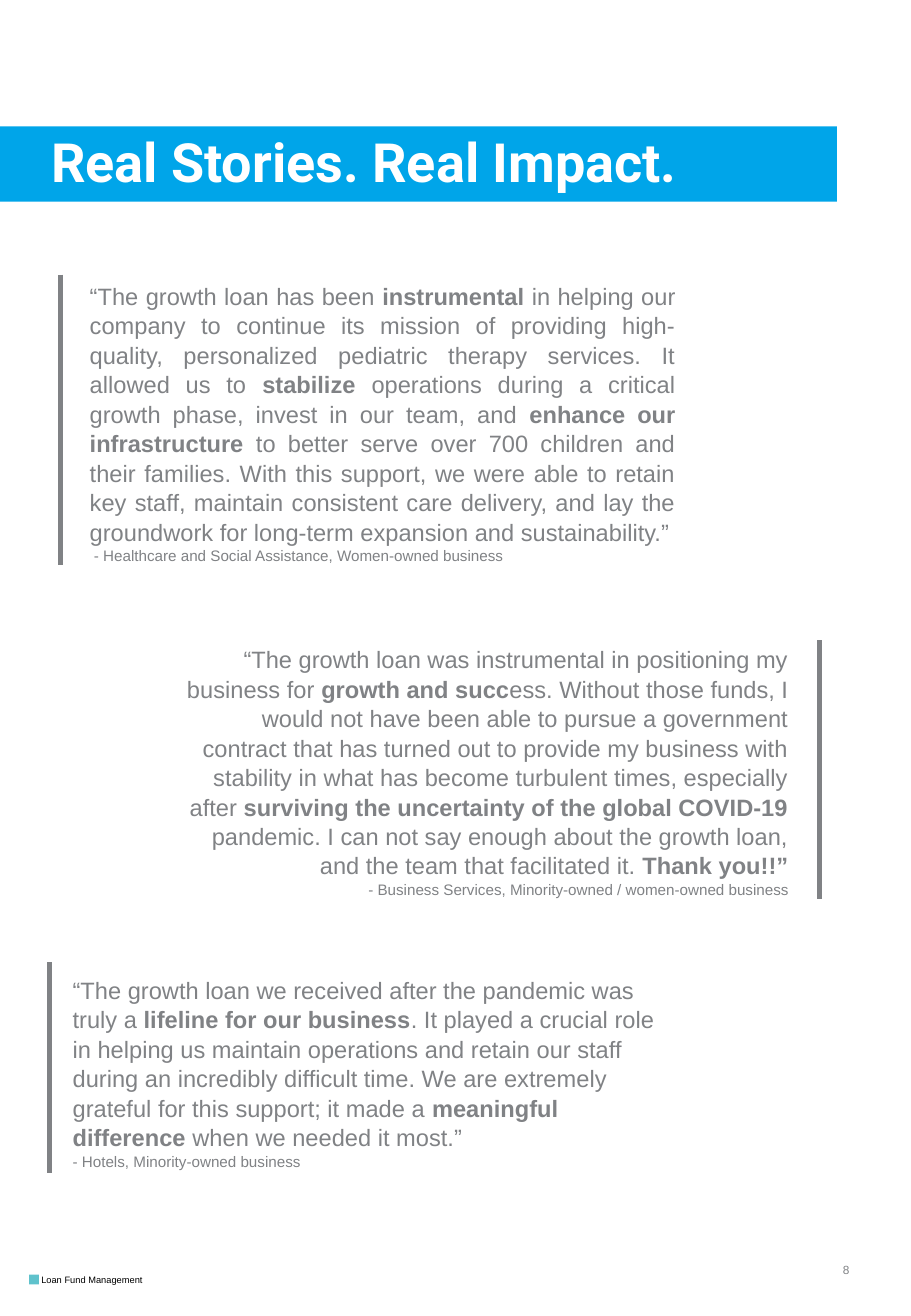
import pptx
import pptx.util
import pptx.dml.color
import pptx.enum.shapes
import pptx.enum.text
import pptx.oxml
from pptx.util import Inches, Pt

RGBColor = pptx.dml.color.RGBColor
Align = pptx.enum.text.PP_ALIGN
Anchor = pptx.enum.text.MSO_ANCHOR
RECTANGLE = pptx.enum.shapes.MSO_SHAPE.RECTANGLE

BLUE = RGBColor(0x00, 0xA5, 0xE9)
TEAL = RGBColor(0x5F, 0xC2, 0xCC)
GREY = RGBColor(0x80, 0x82, 0x85)
WHITE = RGBColor(0xFF, 0xFF, 0xFF)
BLACK = RGBColor(0x00, 0x00, 0x00)

# Text box, rule (x, top, bottom), alignment, quote with *bold* parts, source
STORIES = [
    ((0.64, 2.26, 5.02, 2.39), (0.5, 2.26, 4.65), Align.JUSTIFY,
     "“The growth loan has been *instrumental *in helping our company to continue "
     "its mission of providing high-quality, personalized pediatric therapy "
     "services. It allowed us to *stabilize *operations during a critical growth "
     "phase, invest in our team, and *enhance our infrastructure *to better serve "
     "over 700 children and their families. With this support, we were able to "
     "retain key staff, maintain consistent care delivery, and lay the groundwork "
     "for long-term expansion and sustainability.”",
     " - Healthcare and Social Assistance, Women-owned business"),
    ((1.42, 5.25, 5.17, 2.15), (6.75, 5.27, 7.4), Align.RIGHT,
     "“The growth loan was instrumental in positioning my business for *growth and "
     "succ*ess. Without those funds, I would not have been able to pursue a "
     "government contract that has turned out to provide my business with "
     "stability in what has become turbulent times, especially after *surviving "
     "the uncertainty of the global COVID-19 *pandemic. I can not say enough about "
     "the growth loan, and the team that facilitated it. *Thank you!!”*",
     "- Business Services, Minority-owned / women-owned business"),
    ((0.5, 7.97, 5.17, 1.68), (0.41, 7.92, 9.65), Align.LEFT,
     "“The growth loan we received after the pandemic was truly a *lifeline for our "
     "business*. It played a crucial role in helping us maintain operations and "
     "retain our staff during an incredibly difficult time. We are extremely "
     "grateful for this support; it made a *meaningful difference *when we needed "
     "it most.”",
     "- Hotels, Minority-owned business"),
]

presentation = pptx.Presentation()
presentation.slide_width = Inches(7.5)
presentation.slide_height = Inches(10.83)
slide = presentation.slides.add_slide(presentation.slide_layouts[5])
shapes = slide.shapes


def add_rectangle(left, top, width, height, color):
    shape = shapes.add_shape(RECTANGLE, Inches(left), Inches(top),
                             Inches(width), Inches(height))
    shape.shadow.inherit = False
    shape.fill.solid()
    shape.fill.fore_color.rgb = color
    shape.line.fill.background()
    return shape


def format_font(font, size, color, name="Arial", bold=False):
    font.name = name
    font.size = Pt(size)
    font.bold = bold
    font.color.rgb = color


# Title on its band
title = shapes.title
title.left, title.top = Inches(0.42), Inches(1.06)
title.width, title.height = Inches(6.47), Inches(0.94)
frame = title.text_frame
frame.text = "Real Stories. Real Impact."
frame.auto_size = pptx.enum.text.MSO_AUTO_SIZE.NONE
frame.vertical_anchor = Anchor.TOP
frame.margin_left = frame.margin_top = frame.margin_right = frame.margin_bottom = 0
frame.paragraphs[0].alignment = Align.LEFT
format_font(frame.paragraphs[0].runs[0].font, 32, WHITE, "Roboto", True)
band = add_rectangle(0, 1.04, 6.89, 0.62, BLUE)
title._element.addprevious(band._element)

# Client stories
for box, (rule_x, rule_top, rule_bottom), alignment, quote, source in STORIES:
    story = shapes.add_textbox(*[Inches(length) for length in box])
    frame = story.text_frame
    frame.word_wrap = True
    quote_paragraph = frame.paragraphs[0]
    for index, part in enumerate(quote.split("*")):
        if part:
            run = quote_paragraph.add_run()
            run.text = part
            format_font(run.font, 14, GREY, bold=index % 2 == 1)
    source_paragraph = frame.add_paragraph()
    source_paragraph.text = source
    format_font(source_paragraph.runs[0].font, 9, GREY)
    for paragraph in frame.paragraphs:
        paragraph.alignment = alignment
        paragraph.line_spacing = 1.04

    rule = shapes.add_connector(pptx.enum.shapes.MSO_CONNECTOR.STRAIGHT,
                                Inches(rule_x), Inches(rule_top),
                                Inches(rule_x), Inches(rule_bottom))
    rule.line.color.rgb = GREY
    rule.line.width = Pt(3)
    rule._element.spPr.append(pptx.oxml.parse_xml(
        '<a:effectLst xmlns:a="http://schemas.openxmlformats.org/drawingml/2006/main"/>'))

# Footer
add_rectangle(0.24, 10.49, 0.08, 0.08, TEAL)
owner = shapes.add_textbox(Inches(0.34), Inches(10.48), Inches(0.93), Inches(0.1))
frame = owner.text_frame
frame.text = "Loan Fund Management"
frame.word_wrap = False
frame.margin_left = frame.margin_right = frame.margin_bottom = 0
frame.margin_top = Inches(0.01)
format_font(frame.paragraphs[0].runs[0].font, 5.5, BLACK)

page_number = shapes.add_textbox(Inches(6.67), Inches(10.34), Inches(0.42), Inches(0.22))
frame = page_number.text_frame
frame.text = "8"
frame.word_wrap = True
frame.vertical_anchor = Anchor.MIDDLE
frame.paragraphs[0].alignment = Align.RIGHT
format_font(frame.paragraphs[0].runs[0].font, 7, GREY)

presentation.save("out.pptx")
